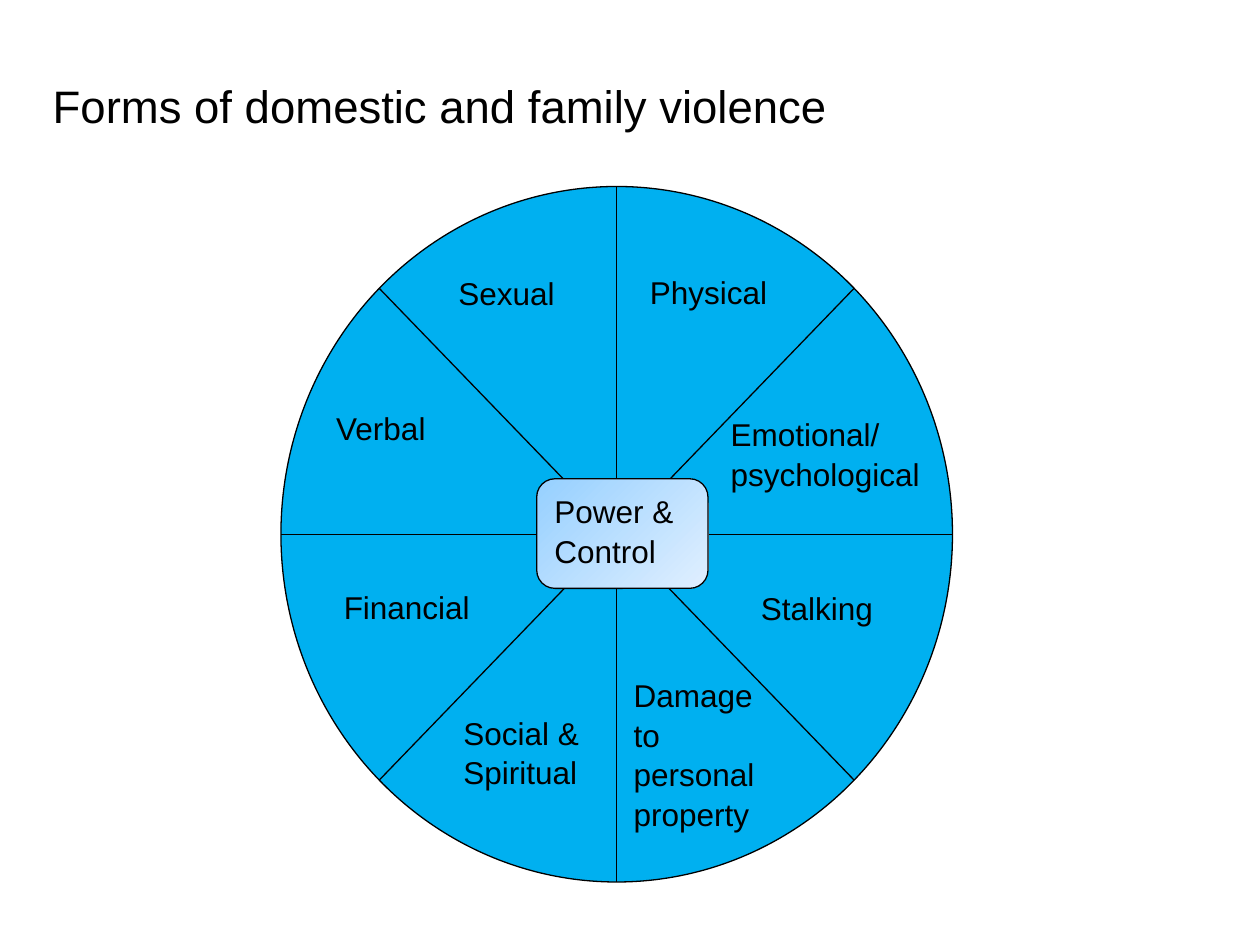
from pptx import Presentation
from pptx.dml.color import RGBColor
from pptx.enum.shapes import MSO_CONNECTOR as Connector, MSO_SHAPE as Shape
from pptx.enum.text import MSO_ANCHOR as Anchor
from pptx.oxml.ns import qn
from pptx.util import Inches, Pt

BLACK = RGBColor(0x00, 0x00, 0x00)
WHEEL_BLUE = RGBColor(0x00, 0xB0, 0xF0)
HUB_START = RGBColor(0x96, 0xD0, 0xFF)
HUB_END = RGBColor(0xE0, 0xEF, 0xFF)

COLUMNS, ROWS = 100, 75
WHEEL = (22.3, 14.8, 53.3, 55.2)
HUB = (42.6, 38, 13.6, 8.7)
LABELS = [
    (("Physical",), (50.6, 21, 12.7, 4.5)),
    (("Emotional/", "psychological"), (57, 32.3, 18.5, 7.8)),
    (("Sexual",), (35.4, 21.1, 11.6, 4.5)),
    (("Verbal",), (25.7, 31.8, 10.1, 4.5)),
    (("Financial",), (26.3, 46, 13.5, 4.5)),
    (("Social & Spiritual",), (35.8, 56, 12.2, 7.8)),
    (("Damage to personal property",), (49.3, 53, 12.8, 14.5)),
    (("Stalking",), (59.4, 46.1, 13.1, 4.5)),
]


def write_text(shape, *lines, size=18, font="Arial", color=BLACK, spacing=1.05):
    frame = shape.text_frame
    frame.word_wrap = True
    frame.vertical_anchor = Anchor.TOP
    frame.text = "\n".join(lines)
    for paragraph in frame.paragraphs:
        paragraph.line_spacing = spacing
        paragraph.font.size = Pt(size)
        paragraph.font.name = font
        paragraph.font.color.rgb = color


class WheelSlide:
    def __init__(self, presentation):
        self.slide = presentation.slides.add_slide(presentation.slide_layouts[6])
        self.column = presentation.slide_width / COLUMNS
        self.row = presentation.slide_height / ROWS
        self.line_color = BLACK
        self.line_width = Pt(0.75)

    def place(self, left, top, width, height):
        return (round(left * self.column), round(top * self.row),
                round(width * self.column), round(height * self.row))

    def outline(self, line):
        line.color.rgb = self.line_color
        line.width = self.line_width

    def text(self, lines, box, **style):
        write_text(self.slide.shapes.add_textbox(*self.place(*box)), *lines, **style)

    def shape(self, kind, box):
        shape = self.slide.shapes.add_shape(kind, *self.place(*box))
        shape.shadow.inherit = False
        self.outline(shape.line)
        return shape

    def wheel(self, box):
        wheel = self.shape(Shape.FLOWCHART_SUMMING_JUNCTION, box)
        wheel.fill.solid()
        wheel.fill.fore_color.rgb = WHEEL_BLUE
        left, top, width, height = box
        middle, center = left + width / 2, top + height / 2
        self.spoke(middle, top, middle, top + height)
        self.spoke(left, center, left + width, center)

    def spoke(self, *ends):
        line = self.slide.shapes.add_connector(Connector.STRAIGHT, *self.place(*ends))
        self.outline(line.line)
        properties = line._element.spPr
        properties.append(properties.makeelement(qn("a:effectLst"), {}))

    def hub(self, text, box):
        hub = self.shape(Shape.ROUNDED_RECTANGLE, box)
        hub.fill.gradient()
        hub.fill.gradient_angle = 315
        for stop, color in zip(hub.fill.gradient_stops, (HUB_START, HUB_END)):
            stop.color.rgb = color
        write_text(hub, text)
        for paragraph in hub.text_frame.paragraphs:
            paragraph.alignment = 1


def main():
    presentation = Presentation()
    presentation.slide_width, presentation.slide_height = Inches(10), Inches(7.5)
    page = WheelSlide(presentation)
    page.text(["Forms of domestic and family violence"], (3.2, 5.5, 76.4, 5.4), size=26)
    page.wheel(WHEEL)
    page.hub("Power & Control", HUB)
    for lines, box in LABELS:
        page.text(lines, box)
    presentation.save("out.pptx")


if __name__ == "__main__":
    main()
